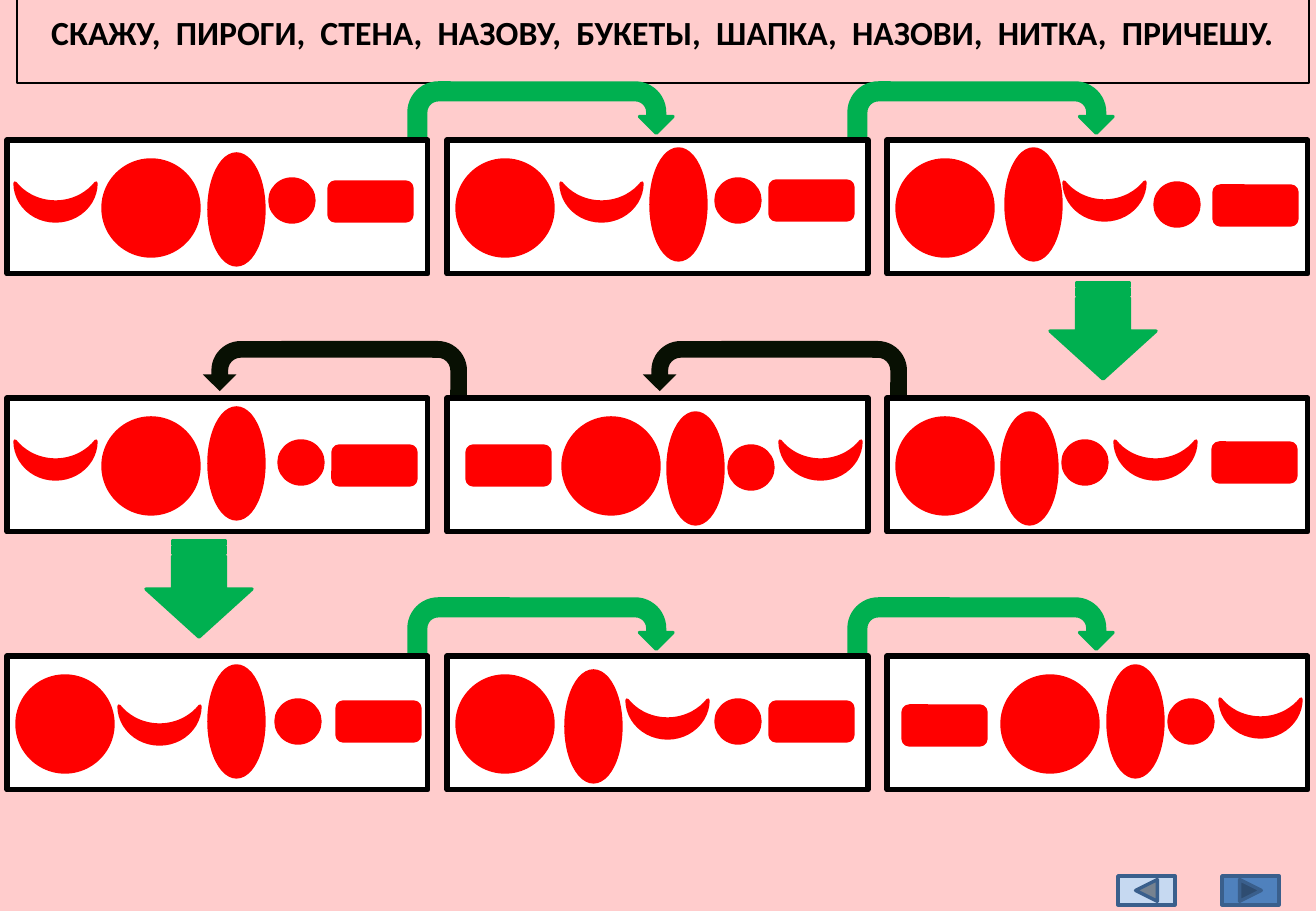
import pptx
import pptx.dml.color
import pptx.enum.shapes
import pptx.enum.text
import pptx.util

SCALE = 914400 / 121.5
SHAPES = pptx.enum.shapes.MSO_SHAPE
RED, GREEN, DARK = "FF0000", "00B050", "081003"


def color(hex_string):
    return pptx.dml.color.RGBColor.from_string(hex_string)


def add_figure(kind, left, top, width, height, fill, line=None, points=2, rotation=0):
    if rotation in (90, 270):
        left, top = left + (width - height) / 2, top + (height - width) / 2
        width, height = height, width
    box = [round(length * SCALE) for length in (left, top, width, height)]
    shape = slide.shapes.add_shape(kind, *box)
    shape.rotation = rotation
    shape.shadow.inherit = False
    shape.fill.solid()
    shape.fill.fore_color.rgb = color(fill)
    if line:
        shape.line.color.rgb = color(line)
        shape.line.width = pptx.util.Pt(points)
    else:
        shape.line.fill.background()
    return shape


presentation = pptx.Presentation()
presentation.slide_width = round(1316 * SCALE)
presentation.slide_height = round(911 * SCALE)
slide = presentation.slides.add_slide(presentation.slide_layouts[5])
slide.background.fill.solid()
slide.background.fill.fore_color.rgb = color("FFCCCC")

title = slide.shapes.title
title.left, title.top, title.width, title.height = [
    round(length * SCALE) for length in (17, 6, 1292, 53)
]
title.line.color.rgb = color("000000")
title.line.width = pptx.util.Pt(1.5)
title.text_frame.text = (
    "СКАЖУ,  ПИРОГИ,  СТЕНА,  НАЗОВУ,  БУКЕТЫ,  ШАПКА,  НАЗОВИ,  НИТКА,  ПРИЧЕШУ."
)
title.text_frame.auto_size = pptx.enum.text.MSO_AUTO_SIZE.SHAPE_TO_FIT_TEXT
title.text_frame.vertical_anchor = pptx.enum.text.MSO_ANCHOR.MIDDLE
paragraph = title.text_frame.paragraphs[0]
paragraph.alignment = pptx.enum.text.PP_ALIGN.CENTER
font = paragraph.runs[0].font
font.name = "Calibri"
font.size = pptx.util.Pt(20)
font.bold = True
font.color.rgb = color("000000")

COLUMN_STEP, ROW_STEP = 440, 258
for row in range(3):
    for gap in range(2):
        top = 83 + row * ROW_STEP
        if row == 1:
            arrow = add_figure(
                SHAPES.U_TURN_ARROW, 203 + gap * COLUMN_STEP, top, 264, 67, DARK
            )
            arrow._element.spPr.xfrm.set("flipH", "1")
        else:
            add_figure(
                SHAPES.U_TURN_ARROW, 409 + gap * COLUMN_STEP, top, 264, 67, GREEN, GREEN
            )

for left, top in ((1050, 283), (146, 541)):
    add_figure(SHAPES.STRIPED_RIGHT_ARROW, left, top, 106, 96, GREEN, GREEN, rotation=90)

FIGURES = {
    "circle": (SHAPES.OVAL, 96, 96, 0),
    "oval": (SHAPES.OVAL, 55, 111, 0),
    "dot": (SHAPES.OVAL, 44, 43, 0),
    "moon": (SHAPES.MOON, 81, 38, 270),
    "block": (SHAPES.ROUNDED_RECTANGLE, 83, 39, 0),
}
CARDS = [
    [
        {"moon": (8, 43), "circle": (96, 20), "oval": (202, 14), "dot": (263, 39), "block": (322, 42)},
        {"circle": (10, 20), "moon": (114, 43), "oval": (204, 9), "dot": (269, 39), "block": (323, 41)},
        {"circle": (10, 20), "oval": (119, 9), "moon": (177, 42), "dot": (268, 43), "block": (327, 46)},
    ],
    [
        {"moon": (8, 43), "circle": (96, 20), "oval": (202, 10), "dot": (272, 43), "block": (326, 48)},
        {"block": (20, 48), "circle": (116, 20), "oval": (221, 15), "dot": (282, 48), "moon": (333, 43)},
        {"circle": (10, 20), "oval": (115, 15), "dot": (176, 43), "moon": (228, 43), "block": (326, 45)},
    ],
    [
        {"circle": (10, 20), "moon": (112, 50), "oval": (202, 10), "dot": (269, 44), "block": (330, 46)},
        {"circle": (10, 20), "oval": (119, 15), "moon": (180, 44), "dot": (269, 44), "block": (323, 46)},
        {"block": (16, 50), "circle": (115, 20), "oval": (221, 10), "dot": (282, 44), "moon": (333, 43)},
    ],
]
for row, cards in enumerate(CARDS):
    for column, card in enumerate(cards):
        card_left = 7 + column * COLUMN_STEP
        card_top = 140 + row * ROW_STEP
        add_figure(SHAPES.RECTANGLE, card_left, card_top, 421, 134, "FFFFFF", "000000", 3)
        for name, (left, top) in card.items():
            kind, width, height, rotation = FIGURES[name]
            add_figure(
                kind, card_left + left, card_top + top, width, height, RED, RED, rotation=rotation
            )

for kind, left, fill in (
    (SHAPES.ACTION_BUTTON_BACK_OR_PREVIOUS, 1118, "C6D9F1"),
    (SHAPES.ACTION_BUTTON_FORWARD_OR_NEXT, 1222, "4F81BD"),
):
    add_figure(kind, left, 876, 57, 29, fill, "3A5F8C")

presentation.save("out.pptx")
